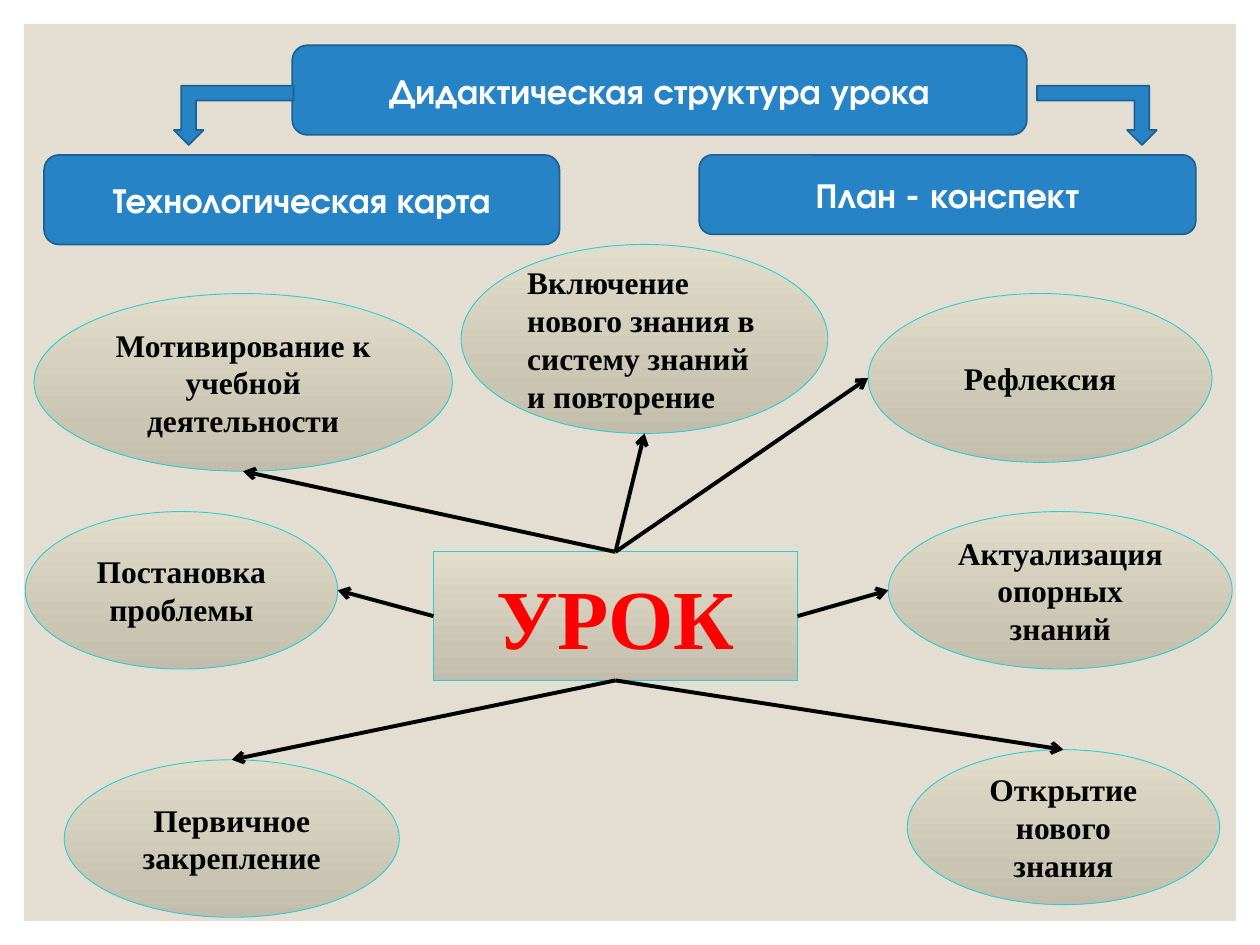
from copy import deepcopy
from pptx import Presentation
from pptx.dml.color import RGBColor as RGB
from pptx.enum.shapes import MSO_CONNECTOR as Link, MSO_SHAPE as Kind
from pptx.enum.text import MSO_ANCHOR as Anchor, PP_ALIGN as Align
from pptx.oxml.ns import qn
from pptx.util import Inches, Pt
from lxml import etree

SAND = RGB(0xE3, 0xDE, 0xD1)
BLUE = RGB(0x26, 0x83, 0xC6)
NAVY = RGB(0x1C, 0x61, 0x92)
CYAN = RGB(0x27, 0xCE, 0xD7)
RED = RGB(0xFF, 0, 0)
BLACK = RGB(0, 0, 0)
WHITE = RGB(0xFF, 0xFF, 0xFF)
SHADES = [(0, RGB(0xE2, 0xDC, 0xCA)), (0.77, RGB(0xCA, 0xC4, 0xB2)),
          (1, RGB(0xC2, 0xBC, 0xAC))]
SERIF = "Times New Roman"
SANS = "TeX Gyre Adventor"

# Middle of each side, in halves of the width and height
SIDES = {"top": (1, 0), "left": (0, 1), "bottom": (1, 2), "right": (2, 1)}


def add_part(slide, kind, box, at):
    """Add a shape at an offset from the corner of its region."""
    left, top, width, height = at
    part = slide.shapes.add_shape(
        kind, Inches(box[0] + left), Inches(box[1] + top),
        Inches(width), Inches(height))
    part.shadow.inherit = False
    return part


def paint(part, fill, line, width):
    part.fill.solid()
    part.fill.fore_color.rgb = fill
    part.line.color.rgb = line
    part.line.width = Pt(width)


def shade(part):
    """Fill from top to bottom with three shades, inside a thin line."""
    part.fill.gradient()
    part.fill.gradient_angle = 270
    stops = part._element.spPr.find(qn("a:gradFill")).find(qn("a:gsLst"))
    stops.append(deepcopy(stops[-1]))
    for stop, (place, color) in zip(part.fill.gradient_stops, SHADES):
        stop.position = place
        stop.color.rgb = color
    part.line.color.rgb = CYAN
    part.line.width = Pt(0.5)


def write(part, text, font, size, color, align=Align.CENTER):
    frame = part.text_frame
    frame.word_wrap = True
    frame.vertical_anchor = Anchor.MIDDLE
    para = frame.paragraphs[0]
    para.alignment = align
    run = para.add_run()
    run.text = text
    run.font.name = font
    run.font.size = Pt(size)
    run.font.bold = True
    run.font.color.rgb = color


def spot(part, side):
    """Find the middle of one side of a shape."""
    across, down = SIDES[side]
    return (part.left + part.width * across // 2,
            part.top + part.height * down // 2)


def add_link(slide, hub, side, oval, end):
    """Draw an arrow from a side of the hub to a side of an oval."""
    link = slide.shapes.add_connector(
        Link.STRAIGHT, *spot(hub, side), *spot(oval, end))
    link.line.color.rgb = BLACK
    link.line.width = Pt(2.25)
    etree.SubElement(link.line._get_or_add_ln(), qn("a:tailEnd"), type="arrow")
    etree.SubElement(link._element.spPr, qn("a:effectLst"))


def add_back(slide, box):
    panel = add_part(slide, Kind.RECTANGLE, box, (0, 0, *box[2:]))
    paint(panel, SAND, SAND, 0)
    panel.line.fill.background()


def add_map(slide, box):
    """Lesson hub with arrows to its stages."""
    hub = add_part(slide, Kind.RECTANGLE, box, (3.24, 2.44, 2.89, 1.02))
    shade(hub)
    write(hub, "УРОК", SERIF, 48, RED)

    # Text, place, hub side, oval side, alignment
    mid = Align.CENTER
    stages = [
        ("Мотивирование к учебной деятельности",
         (0.07, 0.39, 3.32, 1.41), "top", "bottom", mid),
        ("Актуализация опорных знаний",
         (6.85, 2.12, 2.73, 1.25), "right", "left", mid),
        ("Рефлексия", (6.69, 0.39, 2.73, 1.34), "top", "left", mid),
        ("Постановка проблемы",
         (0, 2.12, 2.48, 1.25), "left", "right", mid),
        ("Первичное закрепление",
         (0.31, 4.09, 2.66, 1.25), "bottom", "top", mid),
        ("Открытие нового знания",
         (7, 4.01, 2.48, 1.23), "bottom", "top", mid),
        ("Включение нового знания в систему знаний и повторение",
         (3.46, 0, 2.91, 1.5), "top", "bottom", Align.LEFT),
    ]
    links = []
    for text, at, side, end, align in stages:
        oval = add_part(slide, Kind.OVAL, box, at)
        shade(oval)
        write(oval, text, SERIF, 18, BLACK, align)
        links.append((side, oval, end))
    for side, oval, end in links:
        add_link(slide, hub, side, oval, end)


def add_head(slide, box):
    """Title with bent arrows to the two forms of a lesson plan."""
    labels = [
        ("Дидактическая структура урока", (1.97, 0, 5.83, 0.71)),
        ("Технологическая карта", (0, 0.87, 4.09, 0.71)),
        ("План - конспект", (5.2, 0.87, 3.94, 0.63)),
    ]
    for text, at in labels:
        label = add_part(slide, Kind.ROUNDED_RECTANGLE, box, at)
        paint(label, BLUE, NAVY, 1)
        write(label, text, SANS, 20, WHITE)

    # The right arrow mirrors the left one
    for left, flip in ((1.03, False), (7.88, True)):
        arrow = add_part(slide, Kind.BENT_UP_ARROW, box,
                         (left, 0.32, 0.95, 0.47))
        paint(arrow, BLUE, NAVY, 1)
        arrow.rotation = 180
        if flip:
            arrow._element.spPr.find(qn("a:xfrm")).set("flipH", "1")


def main():
    deck = Presentation()
    deck.slide_width, deck.slide_height = Inches(10), Inches(7.5)
    slide = deck.slides.add_slide(deck.slide_layouts[6])
    add_back(slide, (0.19, 0.19, 9.62, 7.12))
    add_map(slide, (0.2, 1.94, 9.58, 5.34))
    add_head(slide, (0.35, 0.36, 9.14, 1.58))
    deck.save("out.pptx")


if __name__ == "__main__":
    main()
